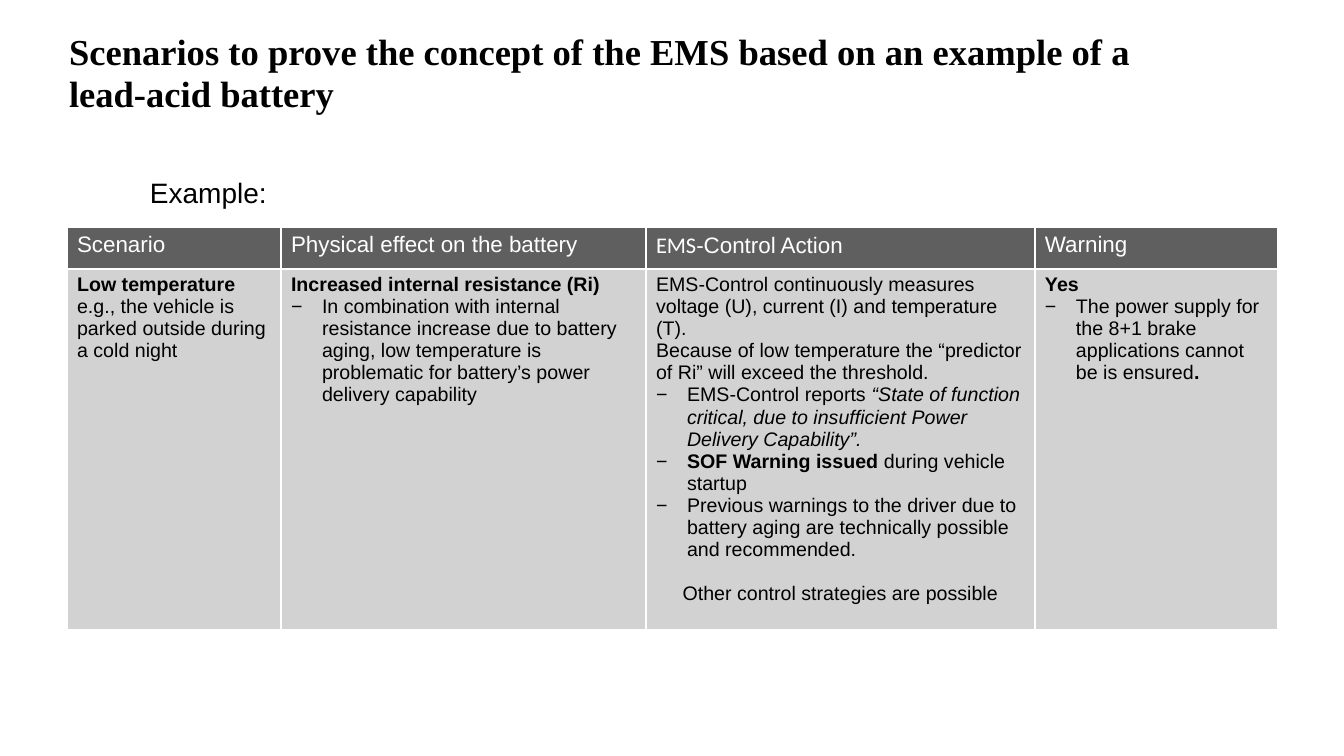
from dataclasses import dataclass

from lxml.etree import SubElement
from pptx import Presentation
from pptx.dml.color import RGBColor
from pptx.enum.text import MSO_ANCHOR as Anchor, MSO_AUTO_SIZE as AutoSize, PP_ALIGN as Align
from pptx.oxml import parse_xml
from pptx.oxml.ns import nsdecls, qn
from pptx.util import Emu, Pt

PX = 9071
BLACK, WHITE = "000000", "FFFFFF"
HEADER_FILL, BODY_FILL = "5F5F5F", "D2D2D2"
COLUMN_WIDTHS = (214, 365, 389, 243)
ROW_HEIGHTS = (42, 361)
HANG = 31


@dataclass(frozen=True)
class Span:
    """A stretch of text with one style."""
    text: str
    bold: bool = False
    italic: bool = False
    font: str = "Arial"


@dataclass(frozen=True)
class Line:
    """One paragraph of a table cell."""
    spans: tuple[Span, ...]
    dash: bool = False
    centered: bool = False
    gap: int = 0


def px(length: int) -> Emu:
    """Turn px into EMU."""
    return Emu(length * PX)


def rgb(value: str) -> RGBColor:
    """Turn a hex string into a colour."""
    return RGBColor.from_string(value)


def plain(text: str) -> Line:
    """Make a regular paragraph."""
    return Line((Span(text),))


def strong(text: str) -> Line:
    """Make a bold paragraph."""
    return Line((Span(text, bold=True),))


def dashed(*spans: Span) -> Line:
    """Make a paragraph led by a dash."""
    return Line(spans, dash=True)


HEADINGS = (
    plain("Scenario"),
    plain("Physical effect on the battery"),
    Line((Span("EMS", font="Calibri"), Span("-Control Action"))),
    plain("Warning"),
)
LOW_TEMPERATURE = (
    (
        strong("Low temperature"),
        plain("e.g., the vehicle is parked outside during a cold night"),
    ),
    (
        strong("Increased internal resistance (Ri)"),
        dashed(Span("In combination with internal resistance increase due to battery aging, "
                    "low temperature is problematic for battery’s power delivery capability")),
    ),
    (
        plain("EMS-Control continuously measures voltage (U), current (I) and temperature (T)."),
        plain("Because of low temperature the “predictor of Ri” will exceed the threshold."),
        dashed(Span("EMS-Control reports "),
               Span("“State of function critical, due to insufficient Power Delivery "
                    "Capability”.", italic=True)),
        dashed(Span("SOF Warning issued ", bold=True), Span("during vehicle startup")),
        dashed(Span("Previous warnings to the driver due to battery aging are technically "
                    "possible and recommended.")),
        Line((Span("Other control strategies are possible"),), centered=True, gap=16),
    ),
    (
        strong("Yes"),
        dashed(Span("The power supply for the 8+1 brake applications cannot be is ensured"),
               Span(".", bold=True)),
    ),
)


def style_font(font, name: str, size: float, color: str, bold: bool = False,
               italic: bool = False) -> None:
    """Set every visible trait of a font."""
    font.name, font.size = name, Pt(size)
    font.bold, font.italic = bold, italic
    font.color.rgb = rgb(color)


def add_dash(paragraph) -> None:
    """Give a paragraph a hanging dash."""
    properties = paragraph._p.get_or_add_pPr()
    properties.set("marL", str(px(HANG)))
    properties.set("indent", str(-px(HANG)))
    SubElement(properties, qn("a:buFont")).set("typeface", "Arial")
    SubElement(properties, qn("a:buChar")).set("char", "−")


def add_borders(cell) -> None:
    """Draw thin white borders around a cell."""
    properties = cell._tc.get_or_add_tcPr()
    for position, side in enumerate("LRTB"):
        properties.insert(position, parse_xml(
            f'<a:ln{side} {nsdecls("a")} w="{Pt(1)}"><a:solidFill>'
            f'<a:srgbClr val="{WHITE}"/></a:solidFill></a:ln{side}>'))


def fill_cell(cell, lines: tuple[Line, ...], fill: str, color: str, size: int) -> None:
    """Write and colour one table cell."""
    cell.fill.solid()
    cell.fill.fore_color.rgb = rgb(fill)
    add_borders(cell)
    frame = cell.text_frame
    for number, line in enumerate(lines):
        paragraph = frame.add_paragraph() if number else frame.paragraphs[0]
        if line.dash:
            add_dash(paragraph)
        if line.centered:
            paragraph.alignment = Align.CENTER
        if line.gap:
            paragraph.space_before = Pt(line.gap)
        for span in line.spans:
            run = paragraph.add_run()
            run.text = span.text
            style_font(run.font, span.font, size, color, span.bold, span.italic)


def add_title(slide) -> None:
    """Fill and place the title placeholder."""
    title = slide.shapes.title
    title.left, title.top, title.width, title.height = map(px, (69, 29, 1244, 95))
    frame = title.text_frame
    frame.text = ("Scenarios to prove the concept of the EMS based on an example of a\v"
                  "lead-acid battery")
    frame.auto_size, frame.vertical_anchor = AutoSize.NONE, Anchor.TOP
    frame.margin_left = frame.margin_bottom = 0
    frame.margin_top, frame.margin_right = px(3), px(10)
    paragraph = frame.paragraphs[0]
    paragraph.alignment, paragraph.line_spacing = Align.LEFT, 0.95
    for run in paragraph.runs:
        style_font(run.font, "Times New Roman", 26.1, BLACK, bold=True)


def add_example_label(slide) -> None:
    """Add the label above the table."""
    label = slide.shapes.add_textbox(*map(px, (140, 171, 138, 44)))
    frame = label.text_frame
    frame.text = "Example:"
    frame.word_wrap = False
    style_font(frame.paragraphs[0].runs[0].font, "Arial", 20, BLACK)


def add_scenario_table(slide) -> None:
    """Add the scenario table."""
    table = slide.shapes.add_table(
        len(ROW_HEIGHTS), len(COLUMN_WIDTHS), px(67), px(227),
        px(sum(COLUMN_WIDTHS)), px(sum(ROW_HEIGHTS))).table
    table.horz_banding = False
    for row, height in zip(table.rows, ROW_HEIGHTS):
        row.height = px(height)
    for index, width in enumerate(COLUMN_WIDTHS):
        table.columns[index].width = px(width)
        fill_cell(table.cell(0, index), (HEADINGS[index],), HEADER_FILL, WHITE, 16)
        fill_cell(table.cell(1, index), LOW_TEMPERATURE[index], BODY_FILL, BLACK, 14)


def main() -> None:
    """Build and save the slide."""
    deck = Presentation()
    deck.slide_width, deck.slide_height = px(1344), px(756)
    slide = deck.slides.add_slide(deck.slide_layouts[5])
    add_title(slide)
    add_scenario_table(slide)
    add_example_label(slide)
    deck.save("out.pptx")


if __name__ == "__main__":
    main()
